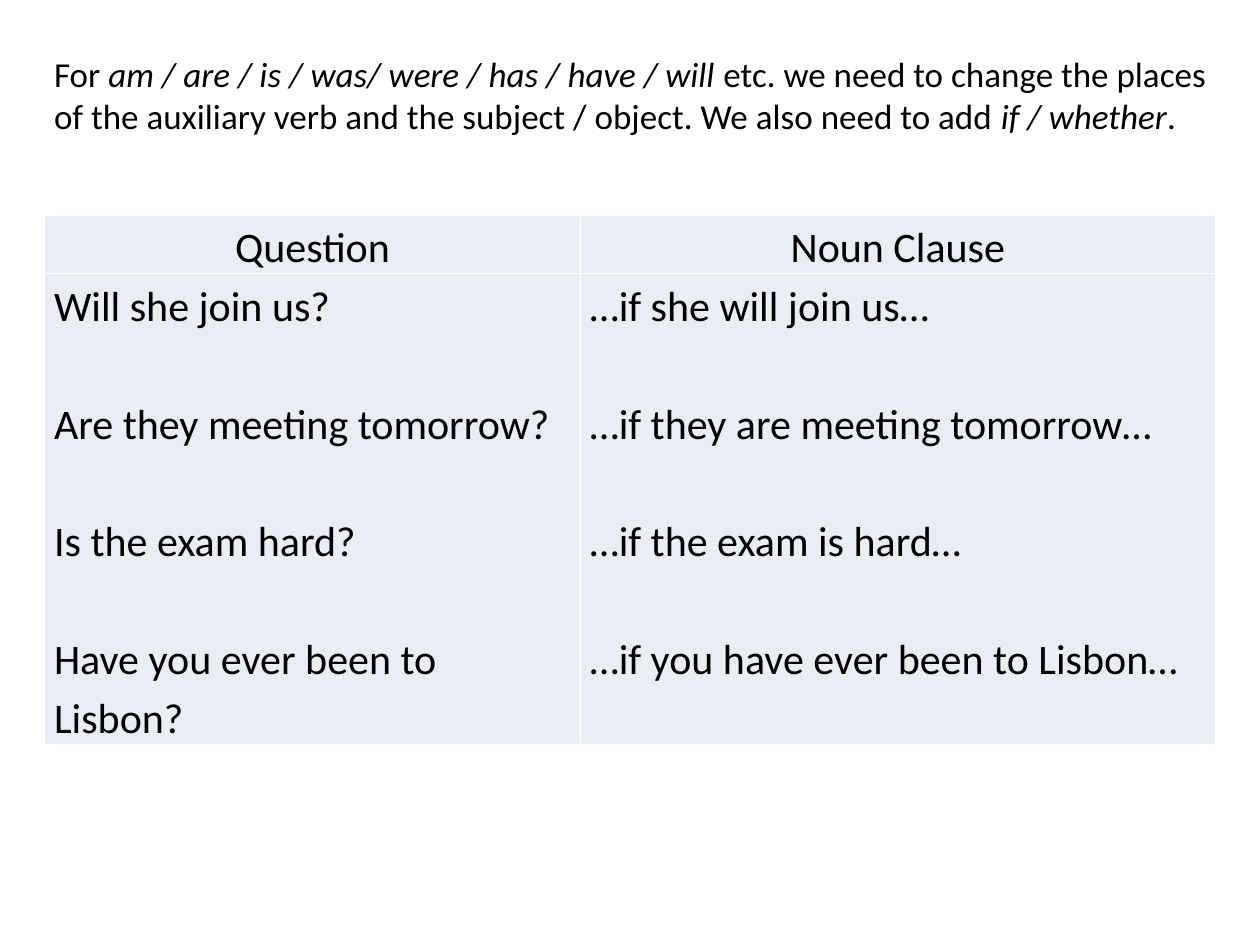
import dataclasses
import pptx
import pptx.util
import pptx.dml.color
import pptx.enum.text
import pptx.oxml
import pptx.oxml.ns

Cm, Pt = pptx.util.Cm, pptx.util.Pt
Color = pptx.dml.color.RGBColor.from_string
Align = pptx.enum.text.PP_ALIGN


@dataclasses.dataclass(frozen=True)
class Theme:
    font: str = "Calibri"
    ink: str = "000000"
    band: str = "E9EDF4"
    rule: str = "FFFFFF"
    note: int = 20
    body: int = 24
    lead: float = 1.15
    gap: float = 33.7


class Page:
    """Holds the theme and the slide being built."""

    def __init__(self, slide, theme):
        self.slide = slide
        self.theme = theme

    def style(self, font, size):
        font.name = self.theme.font
        font.size = Pt(size)
        font.color.rgb = Color(self.theme.ink)

    def note(self, parts, left, top, width, height):
        """Add a wrapped text box; parts are (text, italic) pairs."""
        box = self.slide.shapes.add_textbox(Cm(left), Cm(top), Cm(width), Cm(height))
        frame = box.text_frame
        frame.word_wrap = True
        frame.vertical_anchor = pptx.enum.text.MSO_ANCHOR.MIDDLE
        for text, slant in parts:
            run = frame.paragraphs[0].add_run()
            run.text = text
            self.style(run.font, self.theme.note)
            run.font.italic = slant

    def border(self, cell):
        props = cell._tc.get_or_add_tcPr()
        space = pptx.oxml.ns.nsdecls("a")
        for side in ("lnL", "lnR", "lnT", "lnB"):
            props.append(pptx.oxml.parse_xml(
                f'<a:{side} {space} w="{Pt(1)}"><a:solidFill>'
                f'<a:srgbClr val="{self.theme.rule}"/></a:solidFill></a:{side}>'))

    def cell(self, cell, lines, align):
        self.border(cell)
        cell.fill.solid()
        cell.fill.fore_color.rgb = Color(self.theme.band)
        cell.margin_left = cell.margin_right = Cm(0.19)
        cell.margin_top = cell.margin_bottom = 0
        cell.text_frame.text = "\n".join(lines)
        for i, para in enumerate(cell.text_frame.paragraphs):
            para.alignment = align
            para.line_spacing = self.theme.lead
            if i:
                para.space_before = Pt(self.theme.gap)
            self.style(para.runs[0].font, self.theme.body)

    def table(self, heads, pairs, left, top, widths, heights):
        """Add a header row over one row that lists each column's lines."""
        table = self.slide.shapes.add_table(
            2, len(heads), Cm(left), Cm(top), Cm(sum(widths)), Cm(sum(heights))).table
        table.first_row = table.horz_banding = False
        for row, height in zip(table.rows, heights):
            row.height = Cm(height)
        for i, (head, lines) in enumerate(zip(heads, zip(*pairs))):
            table.columns[i].width = Cm(widths[i])
            self.cell(table.cell(0, i), [head], Align.CENTER)
            self.cell(table.cell(1, i), lines, Align.LEFT)


RULE = [
    ("For ", False),
    ("am / are / is / was/ were / has / have / will ", True),
    ("etc. we need to change the places of the auxiliary verb and the "
     "subject / object. We also need to add ", False),
    ("if / whether", True),
    (".", False),
]
PAIRS = [
    ("Will she join us?", "…if she will join us…"),
    ("Are they meeting tomorrow?", "…if they are meeting tomorrow…"),
    ("Is the exam hard?", "…if the exam is hard…"),
    ("Have you ever been to Lisbon?", "…if you have ever been to Lisbon…"),
]


def main():
    deck = pptx.Presentation()
    deck.slide_width, deck.slide_height = Cm(25.4), Cm(19.05)
    page = Page(deck.slides.add_slide(deck.slide_layouts[6]), Theme())
    page.table(("Question", "Noun Clause"), PAIRS, 0.9, 4.33, (10.8, 12.8), (1.17, 9.42))
    page.note(RULE, 0.84, 0.92, 23.75, 1.96)
    deck.save("out.pptx")


if __name__ == "__main__":
    main()
